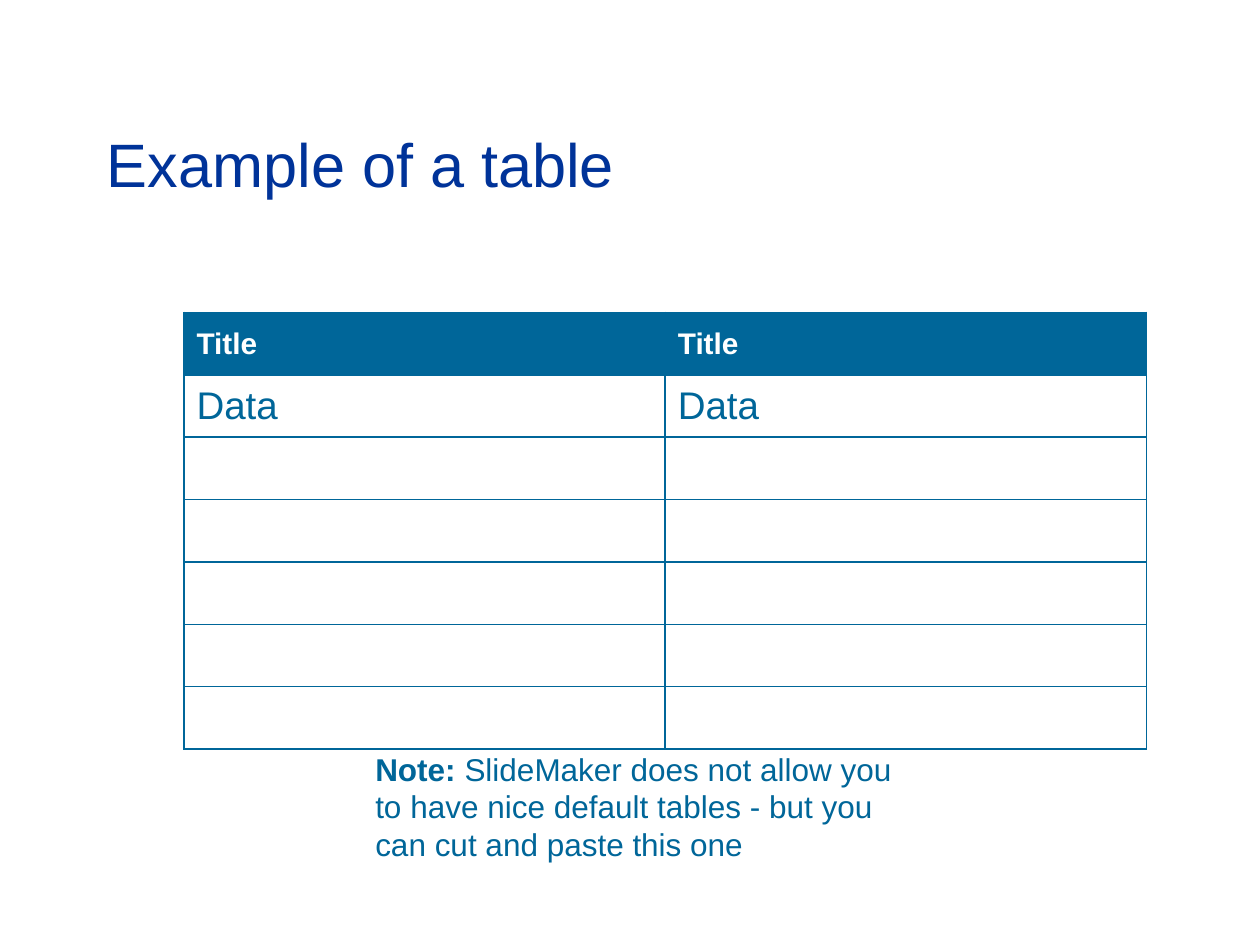
from dataclasses import dataclass

from lxml.etree import SubElement
from pptx import Presentation
from pptx.dml.color import RGBColor as RGB
from pptx.enum.text import MSO_ANCHOR as Anchor
from pptx.oxml.ns import qn
from pptx.util import Inches, Pt


@dataclass(frozen=True)
class Theme:
    font: str = "Arial"
    title_color: str = "003399"
    accent: str = "006699"
    header_color: str = "FFFFFF"
    title_size: int = 35
    header_size: int = 17
    data_size: int = 22
    note_size: int = 18
    border: float = 1


theme = Theme()


def add_text(paragraph, text, *, size, color=theme.accent, bold=False):
    run = paragraph.add_run()
    run.text = text
    run.font.name = theme.font
    run.font.size = Pt(size)
    run.font.bold = bold
    run.font.color.rgb = RGB.from_string(color)


def set_borders(cell):
    """Draw all four sides; borders must precede the fill in the cell's XML."""
    properties = cell._tc.get_or_add_tcPr()
    for side in ("a:lnL", "a:lnR", "a:lnT", "a:lnB"):
        line = SubElement(properties, qn(side), w=str(Pt(theme.border)))
        fill = SubElement(line, qn("a:solidFill"))
        SubElement(fill, qn("a:srgbClr"), val=theme.accent)


deck = Presentation()
deck.slide_width, deck.slide_height = Inches(10), Inches(7.5)
W, H = deck.slide_width, deck.slide_height
slide = deck.slides.add_slide(deck.slide_layouts[6])

# Title
heading = slide.shapes.add_textbox(
    int(W * 0.075), int(H * 0.09), int(W * 0.85), int(H * 0.165)).text_frame
heading.word_wrap = True
heading.vertical_anchor = Anchor.MIDDLE
add_text(heading.paragraphs[0], "Example of a table",
         size=theme.title_size, color=theme.title_color)

# Table: a header, one row of data and five empty rows
COLUMNS, ROWS = 2, 7
column_width, row_height = Inches(3.82), Inches(0.495)
table = slide.shapes.add_table(
    ROWS, COLUMNS, Inches(1.46), Inches(2.48),
    column_width * COLUMNS, row_height * ROWS).table
for column in table.columns:
    column.width = column_width
for row in table.rows:
    row.height = row_height
    for cell in row.cells:
        cell.vertical_anchor = Anchor.MIDDLE
        set_borders(cell)
        cell.fill.background()

for column in range(COLUMNS):
    header, data = table.cell(0, column), table.cell(1, column)
    header.fill.solid()
    header.fill.fore_color.rgb = RGB.from_string(theme.accent)
    add_text(header.text_frame.paragraphs[0], "Title",
             size=theme.header_size, color=theme.header_color, bold=True)
    add_text(data.text_frame.paragraphs[0], "Data", size=theme.data_size)

# Note under the table
note = slide.shapes.add_textbox(
    Inches(2.88), Inches(5.9), Inches(4.49), Inches(1)).text_frame
note.word_wrap = True
remark = note.paragraphs[0]
add_text(remark, "Note: ", size=theme.note_size, bold=True)
add_text(remark, "SlideMaker does not allow you to have nice default tables"
         " - but you can cut and paste this one", size=theme.note_size)

deck.save("out.pptx")
